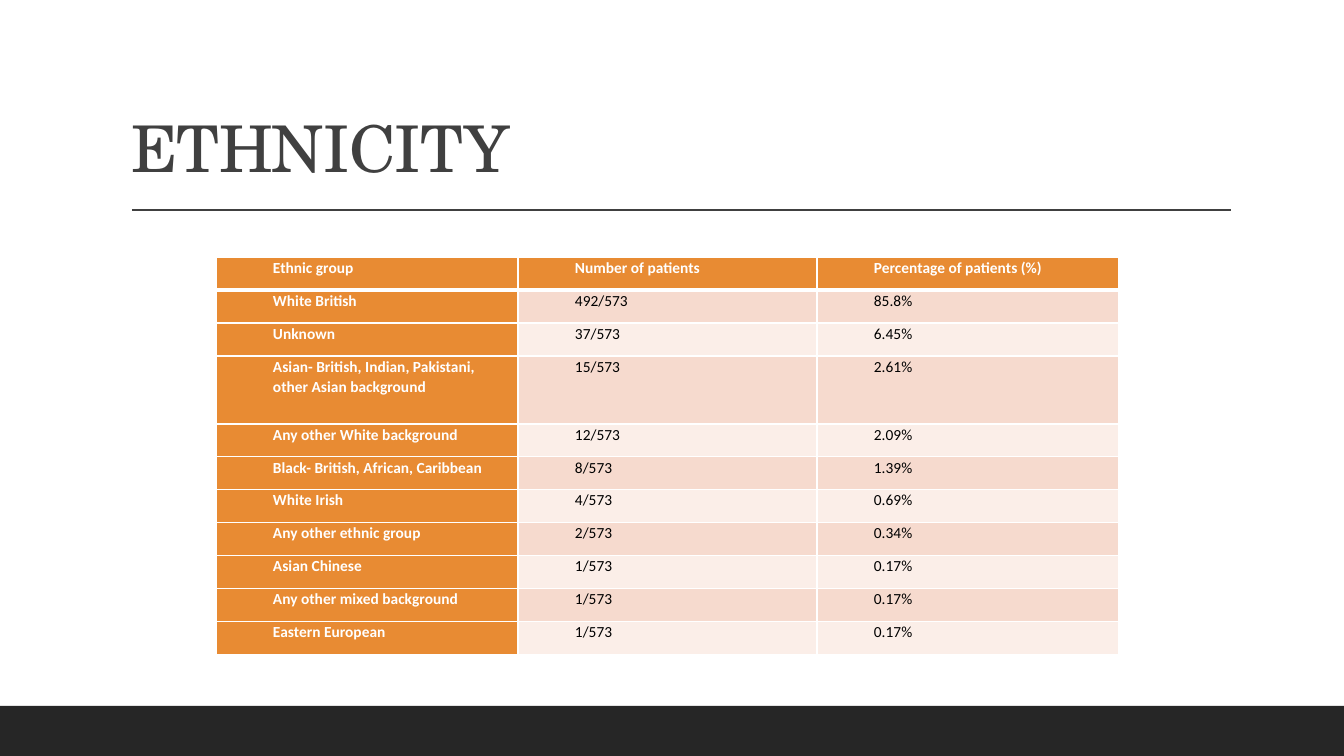
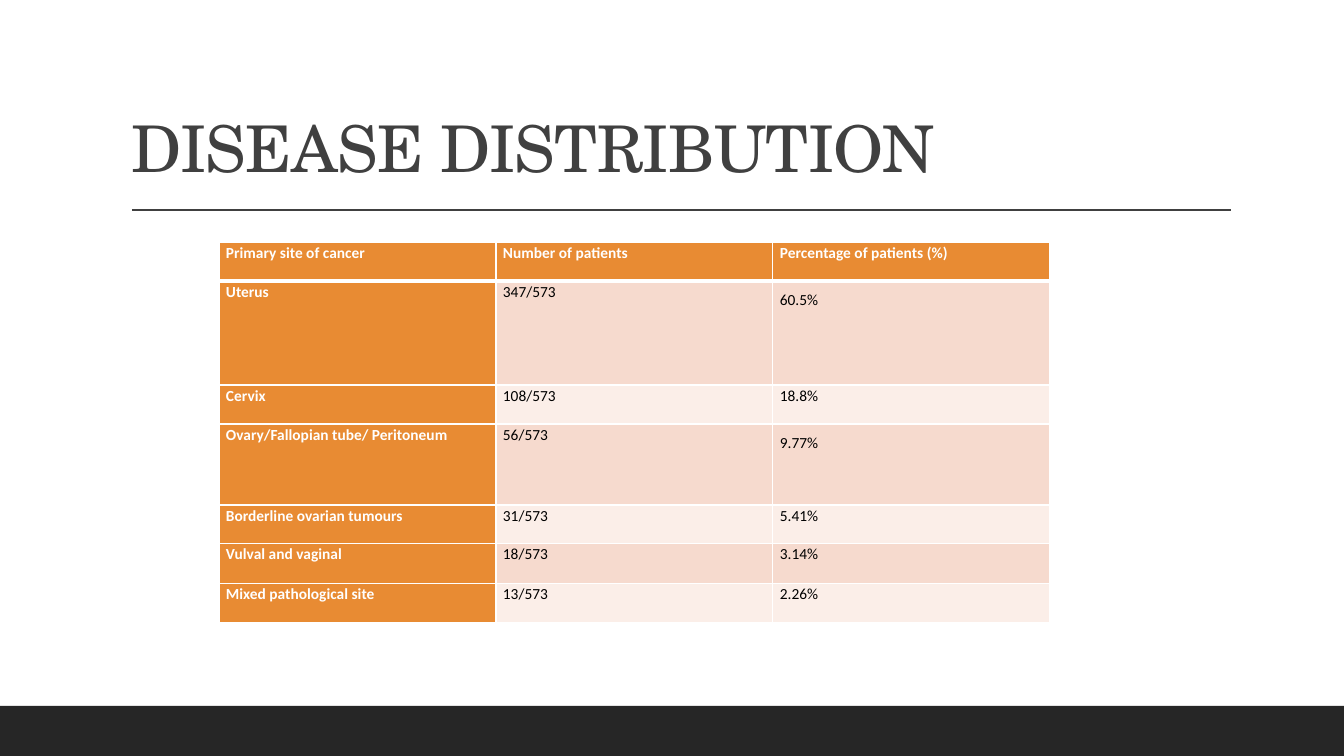
from dataclasses import dataclass

from lxml.etree import SubElement
from pptx import Presentation
from pptx.dml.color import RGBColor as Rgb
from pptx.enum.shapes import MSO_CONNECTOR as Connector
from pptx.enum.shapes import MSO_SHAPE as Shape
from pptx.enum.text import MSO_ANCHOR as Anchor
from pptx.enum.text import MSO_AUTO_SIZE as AutoSize
from pptx.enum.text import PP_ALIGN as Align
from pptx.oxml.ns import qn
from pptx.util import Emu, Pt


@dataclass(frozen=True)
class Theme:
    paper: str = "FFFFFF"
    band: str = "262626"
    heading: str = "404040"
    accent: str = "E88B33"
    odd_row: str = "F6DACE"
    even_row: str = "FBEEE8"
    body: str = "000000"
    title_font: str = "TeX Gyre Schola"
    table_font: str = "Calibri"
    title_size: int = 46
    table_size: int = 11
    border: int = 1
    header_border: int = 3


THEME = Theme()
EMU_PER_PX = 914400 / 100.8
SLIDE_SIZE = (1344, 756)
TITLE_BOX = (121, 31, 1109, 160)
RULE_BOX = (132, 210, 1099, 0)
BAND_BOX = (0, 706, 1344, 50)
CELL_INSET = 7
TITLE_ONLY = 5

ETHNICITY = [
    ("Ethnic group", "Number of patients", "Percentage of patients (%)"),
    ("White British", "492/573", "85.8%"),
    ("Unknown", "37/573", "6.45%"),
    ("Asian- British, Indian, Pakistani, other Asian background", "15/573", "2.61%"),
    ("Any other White background", "12/573", "2.09%"),
    ("Black- British, African, Caribbean", "8/573", "1.39%"),
    ("White Irish", "4/573", "0.69%"),
    ("Any other ethnic group", "2/573", "0.34%"),
    ("Asian Chinese", "1/573", "0.17%"),
    ("Any other mixed background", "1/573", "0.17%"),
    ("Eastern European", "1/573", "0.17%"),
]
DISEASE = [
    ("Primary site of cancer", "Number of patients", "Percentage of patients (%)"),
    ("Uterus", "347/573", "60.5%"),
    ("Cervix", "108/573", "18.8%"),
    ("Ovary/Fallopian tube/ Peritoneum", "56/573", "9.77%"),
    ("Borderline ovarian tumours", "31/573", "5.41%"),
    ("Vulval and vaginal", "18/573", "3.14%"),
    ("Mixed pathological site", "13/573", "2.26%"),
]


def px(length):
    return Emu(round(length * EMU_PER_PX))


def color(value):
    return Rgb.from_string(value)


def style_runs(paragraph, font, size, ink, bold=False):
    for run in paragraph.runs:
        run.font.name = font
        run.font.size = Pt(size)
        run.font.bold = bold
        run.font.color.rgb = color(ink)


def add_band(slide, box):
    band = slide.shapes.add_shape(Shape.RECTANGLE, *map(px, box))
    band.shadow.inherit = False
    band.fill.solid()
    band.fill.fore_color.rgb = color(THEME.band)
    band.line.fill.background()


def add_rule(slide, box):
    left, top, width, height = box
    rule = slide.shapes.add_connector(
        Connector.STRAIGHT, px(left), px(top), px(left + width), px(top + height)
    )
    rule.line.color.rgb = color(THEME.heading)
    rule.line.width = Pt(1)
    SubElement(rule._element.spPr, qn("a:effectLst"))


def place_title(slide, box, text):
    title = slide.shapes.title
    title.left, title.top, title.width, title.height = map(px, box)
    frame = title.text_frame
    frame.text = text
    frame.word_wrap = True
    frame.auto_size = AutoSize.NONE
    frame.vertical_anchor = Anchor.BOTTOM
    heading = frame.paragraphs[0]
    heading.alignment = Align.LEFT
    heading.line_spacing = 0.9
    style_runs(heading, THEME.title_font, THEME.title_size, THEME.heading)
    heading.runs[0].font._element.set("spc", "-50")


def set_borders(cell, top, bottom):
    properties = cell._tc.get_or_add_tcPr()
    widths = {"L": THEME.border, "R": THEME.border, "T": top, "B": bottom}
    for side, width in widths.items():
        edge = SubElement(properties, qn(f"a:ln{side}"), w=str(Pt(width)))
        fill = SubElement(edge, qn("a:solidFill"))
        SubElement(fill, qn("a:srgbClr"), val=THEME.paper)


def style_cell(cell, text, row, column, indent, line_spacing):
    labelled = row == 0 or column == 0
    set_borders(
        cell,
        top=THEME.header_border if row == 1 else THEME.border,
        bottom=THEME.header_border if row == 0 else THEME.border,
    )
    stripe = THEME.odd_row if row % 2 else THEME.even_row
    cell.fill.solid()
    cell.fill.fore_color.rgb = color(THEME.accent if labelled else stripe)
    cell.margin_left = cell.margin_right = px(CELL_INSET)
    cell.margin_top = cell.margin_bottom = 0
    cell.vertical_anchor = Anchor.TOP
    cell.text_frame.text = text
    entry = cell.text_frame.paragraphs[0]
    entry.line_spacing = line_spacing
    entry.space_after = Pt(8)
    entry._p.get_or_add_pPr().set("marL", str(px(indent)))
    ink = THEME.paper if labelled else THEME.body
    style_runs(entry, THEME.table_font, THEME.table_size, ink, labelled)


def add_patient_table(slide, origin, widths, heights, records, indent=0, loose_rows=()):
    box = (*origin, sum(widths), sum(heights))
    table = slide.shapes.add_table(len(heights), len(widths), *map(px, box)).table
    for column, width in zip(table.columns, widths):
        column.width = px(width)
    for line, height in zip(table.rows, heights):
        line.height = px(height)
    last = len(widths) - 1
    for row, record in enumerate(records):
        for column, text in enumerate(record):
            loose = row in loose_rows and column == last
            spacing = 1.5 if loose else 1.07
            style_cell(table.cell(row, column), text, row, column, indent, spacing)


def add_table_slide(deck, title, **table_options):
    slide = deck.slides.add_slide(deck.slide_layouts[TITLE_ONLY])
    slide.background.fill.solid()
    slide.background.fill.fore_color.rgb = color(THEME.paper)
    add_band(slide, BAND_BOX)
    add_rule(slide, RULE_BOX)
    place_title(slide, TITLE_BOX, title)
    add_patient_table(slide, **table_options)


def main():
    deck = Presentation()
    deck.slide_width, deck.slide_height = map(px, SLIDE_SIZE)
    add_table_slide(
        deck,
        "ETHNICITY",
        origin=(216, 257),
        widths=[302, 299, 302],
        heights=[33] * 3 + [68] + [33] * 7,
        records=ETHNICITY,
        indent=50,
    )
    add_table_slide(
        deck,
        "DISEASE DISTRIBUTION",
        origin=(219, 242),
        widths=[277] * 3,
        heights=[39, 104, 39, 81, 39, 40, 39],
        records=DISEASE,
        loose_rows=(1, 3),
    )
    deck.save("out.pptx")


if __name__ == "__main__":
    main()
